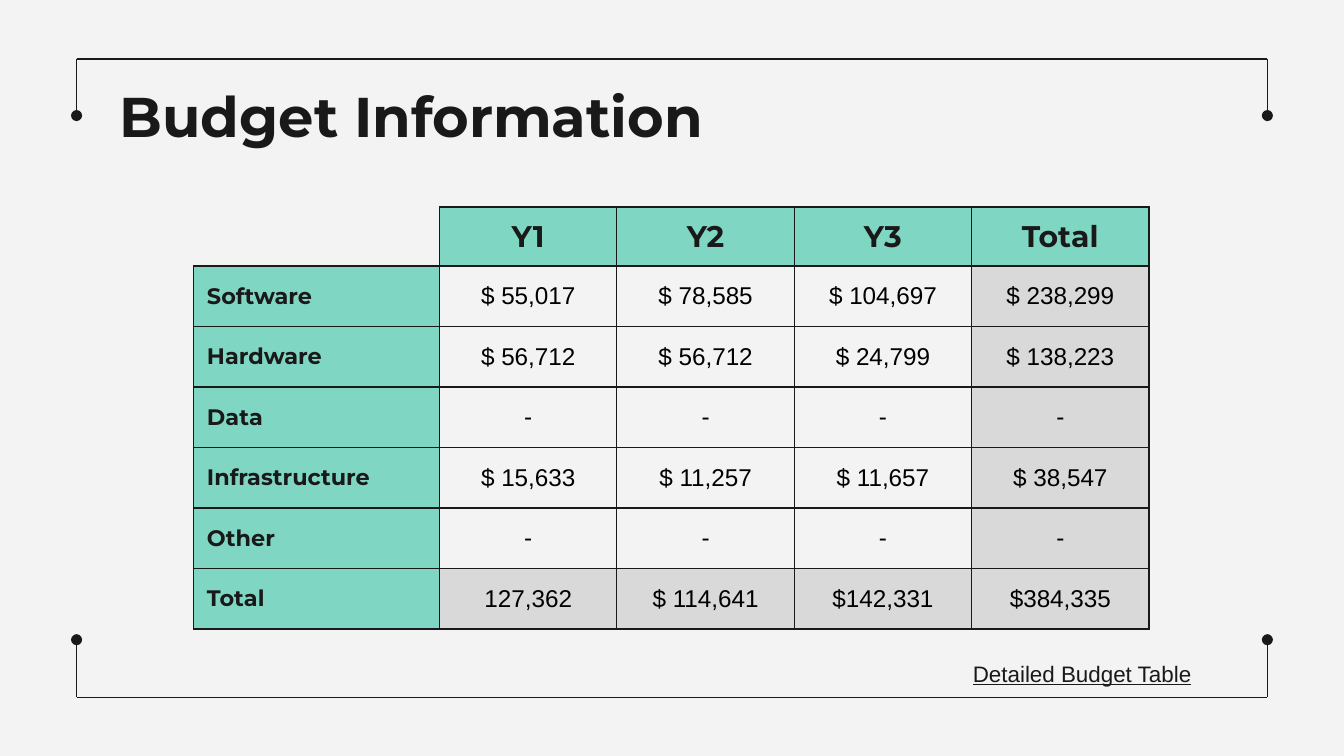
from dataclasses import dataclass

from lxml.etree import SubElement
from pptx import Presentation
from pptx.dml.color import RGBColor
from pptx.enum.shapes import MSO_CONNECTOR
from pptx.enum.text import MSO_ANCHOR, PP_ALIGN
from pptx.oxml.ns import qn
from pptx.util import Inches, Pt


@dataclass(frozen=True)
class Theme:
    background: str = "F3F3F3"
    ink: str = "191919"
    figure: str = "000000"
    header: str = "7FD6C3"
    total: str = "D9D9D9"
    heading_font: str = "Montserrat"
    body_font: str = "Arial"
    title_size: int = 30
    year_size: int = 16
    figure_size: int = 13
    label_size: int = 12
    line_width: float = 0.75


@dataclass(frozen=True)
class FrameLine:
    start: tuple[float, float]
    end: tuple[float, float]
    dotted: bool = False


@dataclass(frozen=True)
class BudgetRow:
    label: str
    amounts: tuple[str, ...]


THEME = Theme()
LEFT, RIGHT = 0.57, 9.43
YEARS = BudgetRow("", ("Y1", "Y2", "Y3", "Total"))
BUDGET = [
    BudgetRow("Software", ("$ 55,017", "$ 78,585", "$ 104,697", "$ 238,299")),
    BudgetRow("Hardware", ("$ 56,712", "$ 56,712", "$ 24,799", "$ 138,223")),
    BudgetRow("Data", ("-",) * 4),
    BudgetRow("Infrastructure", ("$ 15,633", "$ 11,257", "$ 11,657", "$ 38,547")),
    BudgetRow("Other", ("-",) * 4),
    BudgetRow("Total", ("127,362", "$ 114,641", "$142,331", "$384,335")),
]


def write(holder, text: str, *, size: float, font: str = THEME.body_font,
          color: str = THEME.ink, bold: bool = False, underline: bool = False,
          align: PP_ALIGN = PP_ALIGN.LEFT, anchor: MSO_ANCHOR = MSO_ANCHOR.TOP,
          margins: tuple[float, float] = (0.1, 0.1)) -> None:
    """Fill a text frame or table cell; margins are horizontal, vertical."""
    frame = getattr(holder, "text_frame", holder)
    holder.vertical_anchor = anchor
    holder.margin_left = holder.margin_right = Inches(margins[0])
    holder.margin_top = holder.margin_bottom = Inches(margins[1])
    frame.word_wrap = True
    paragraph = frame.paragraphs[0]
    paragraph.alignment = align
    run = paragraph.add_run()
    run.text = text
    run.font.name = font
    run.font.size = Pt(size)
    run.font.bold = bold
    run.font.underline = underline
    run.font.color.rgb = RGBColor.from_string(color)


def draw_line(slide, line: FrameLine) -> None:
    points = [Inches(value) for value in line.start + line.end]
    connector = slide.shapes.add_connector(MSO_CONNECTOR.STRAIGHT, *points)
    connector.line.color.rgb = RGBColor.from_string(THEME.ink)
    connector.line.width = Pt(THEME.line_width)
    properties = connector._element.spPr
    if line.dotted:
        SubElement(properties.find(qn("a:ln")), qn("a:tailEnd"), type="oval")
    SubElement(properties, qn("a:effectLst"))


def draw_frame(slide) -> None:
    for edge, tip in ((0.44, 0.86), (5.19, 4.76)):
        draw_line(slide, FrameLine((LEFT, edge), (RIGHT, edge)))
        for side in (LEFT, RIGHT):
            draw_line(slide, FrameLine((side, edge), (side, tip), dotted=True))


def set_borders(cell, visible: str) -> None:
    """Rule the sides named in visible (of L, R, T, B) and clear the others."""
    properties = cell._tc.get_or_add_tcPr()
    for side in "LRTB":
        border = SubElement(properties, qn(f"a:ln{side}"), w=str(Pt(THEME.line_width)))
        if side in visible:
            fill = SubElement(border, qn("a:solidFill"))
            SubElement(fill, qn("a:srgbClr"), val=THEME.ink)
        else:
            SubElement(border, qn("a:noFill"))


def fill_cell(cell, color: str) -> None:
    cell.fill.solid()
    cell.fill.fore_color.rgb = RGBColor.from_string(color)


def draw_budget(slide) -> None:
    rows = [YEARS, *BUDGET]
    widths = [1.83] + [1.32] * len(YEARS.amounts)
    heights = [0.44] + [0.45] * len(BUDGET)
    table = slide.shapes.add_table(
        len(rows), len(widths), Inches(1.44), Inches(1.54),
        Inches(sum(widths)), Inches(sum(heights))).table
    table.first_row = table.horz_banding = False
    for column, width in zip(table.columns, widths):
        column.width = Inches(width)
    for row, height in zip(table.rows, heights):
        row.height = Inches(height)

    heading = dict(font=THEME.heading_font, bold=True, anchor=MSO_ANCHOR.MIDDLE)
    for r, budget_row in enumerate(rows):
        for c, text in enumerate((budget_row.label, *budget_row.amounts)):
            cell = table.cell(r, c)
            if r == c == 0:
                set_borders(cell, "RB")
                cell.fill.background()
                continue
            set_borders(cell, "LRTB")
            if r == 0:
                fill_cell(cell, THEME.header)
                write(cell, text, size=THEME.year_size, align=PP_ALIGN.CENTER,
                      margins=(0.1, 0.07), **heading)
            elif c == 0:
                fill_cell(cell, THEME.header)
                write(cell, text, size=THEME.label_size, margins=(0.1, 0), **heading)
            else:
                if r == len(rows) - 1 or c == len(widths) - 1:
                    fill_cell(cell, THEME.total)
                else:
                    cell.fill.background()
                write(cell, text, size=THEME.figure_size, color=THEME.figure,
                      align=PP_ALIGN.CENTER, anchor=MSO_ANCHOR.MIDDLE, margins=(0, 0))


def main() -> None:
    deck = Presentation()
    deck.slide_width = Inches(10)
    deck.slide_height = deck.slide_width * 9 // 16
    slide = deck.slides.add_slide(deck.slide_layouts[5])
    slide.background.fill.solid()
    slide.background.fill.fore_color.rgb = RGBColor.from_string(THEME.background)

    draw_frame(slide)
    title = slide.shapes.title
    title.left, title.top = Inches(0.79), Inches(0.51)
    title.width, title.height = Inches(8.43), Inches(0.63)
    write(title.text_frame, "Budget Information", size=THEME.title_size,
          font=THEME.heading_font, bold=True)
    draw_budget(slide)
    details = slide.shapes.add_textbox(
        Inches(7.14), Inches(4.81), Inches(2.22), Inches(0.36))
    write(details.text_frame, "Detailed Budget Table", size=THEME.label_size,
          underline=True)
    deck.save("out.pptx")


if __name__ == "__main__":
    main()
